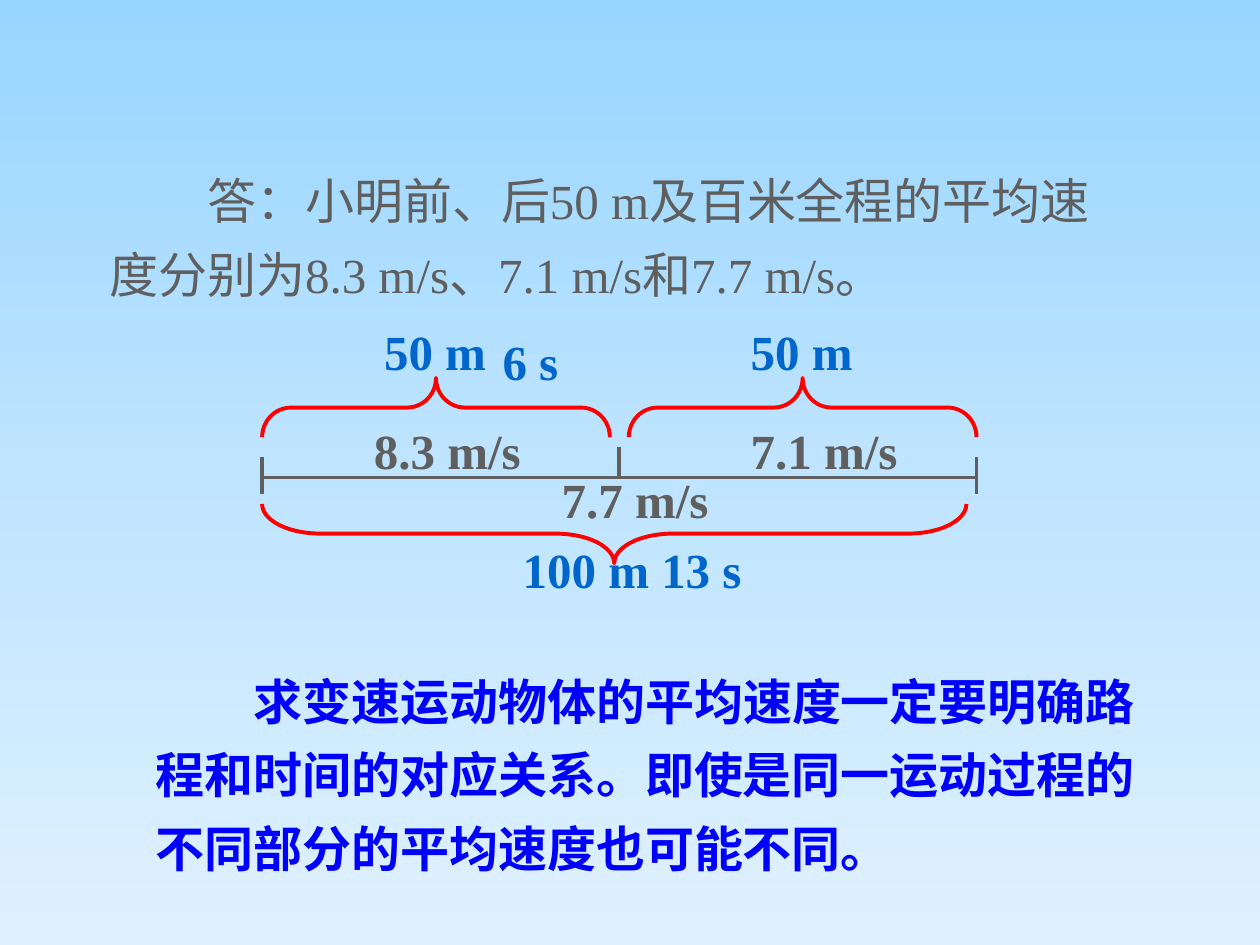
from copy import deepcopy
from dataclasses import dataclass

from lxml import etree
from pptx import Presentation
from pptx.dml.color import RGBColor
from pptx.enum.shapes import MSO_CONNECTOR, MSO_SHAPE
from pptx.enum.text import MSO_ANCHOR, MSO_AUTO_SIZE, PP_ALIGN
from pptx.oxml.ns import qn
from pptx.util import Inches, Pt

LINE = MSO_CONNECTOR.STRAIGHT
BRACE = MSO_SHAPE.LEFT_BRACE
ROUND = MSO_SHAPE.ROUNDED_RECTANGLE
LEFT = PP_ALIGN.LEFT
MIDDLE = MSO_ANCHOR.MIDDLE
GROW = MSO_AUTO_SIZE.SHAPE_TO_FIT_TEXT


@dataclass(frozen=True)
class Theme:
    font: str = "Times New Roman"
    size: int = 28
    stroke: float = 2.25
    gray: str = "5F5F5F"
    blue: str = "0066CC"
    note: str = "0000FF"
    red: str = "FF0000"
    sky: tuple = ("97D6FF", "BFE4FF", "DFF1FF")


THEME = Theme()


def rgb(code):
    return RGBColor.from_string(code)


def paint_back(slide):
    fill = slide.background.fill
    fill.gradient()
    fill.gradient_angle = 270
    first = next(slide.element.iter(qn("a:gs")))
    mid = deepcopy(first)
    mid.set("pos", "50000")
    first.addnext(mid)
    for stop, code in zip(fill.gradient_stops, THEME.sky):
        stop.color.rgb = rgb(code)


def write(shape, text, color, bold=True):
    para = shape.text_frame.paragraphs[0]
    para.text = text
    para.alignment = LEFT
    font = para.font
    font.name = THEME.font
    font.size = Pt(THEME.size)
    font.bold = bold
    font.color.rgb = rgb(color)
    return para


def indent(para):
    para.line_spacing = 1.25
    props = para._p.get_or_add_pPr()
    props.set("marL", "0")
    props.set("indent", str(Pt(2 * THEME.size)))


def add_answer(slide, x, y, w, h):
    box = slide.shapes.add_textbox(Inches(x), Inches(y), Inches(w), Inches(h))
    box.text_frame.word_wrap = True
    box.text_frame.auto_size = GROW
    text = "答：小明前、后50 m及百米全程的平均速度分别为8.3 m/s、7.1 m/s和7.7 m/s。"
    indent(write(box, text, THEME.gray, False))


def add_note(slide, x, y, w, h):
    box = slide.shapes.add_shape(ROUND, Inches(x), Inches(y), Inches(w), Inches(h))
    box.shadow.inherit = False
    box.fill.background()
    box.line.fill.background()
    box.text_frame.word_wrap = True
    box.text_frame.vertical_anchor = MIDDLE
    text = ("求变速运动物体的平均速度一定要明确路程和时间的对应关系。"
            "即使是同一运动过程的不同部分的平均速度也可能不同。")
    indent(write(box, text, THEME.note))


def add_line(slide, x1, y1, x2, y2):
    line = slide.shapes.add_connector(
        LINE, Inches(x1), Inches(y1), Inches(x2), Inches(y2))
    line.line.color.rgb = rgb(THEME.gray)
    line.line.width = Pt(THEME.stroke)
    etree.SubElement(line._element.spPr, qn("a:effectLst"))


def add_brace(slide, x, y, w, h, turn, bend):
    brace = slide.shapes.add_shape(
        BRACE, Inches(x + (w - h) / 2), Inches(y + (h - w) / 2),
        Inches(h), Inches(w))
    brace.rotation = turn
    brace.adjustments[0] = bend
    brace.adjustments[1] = 0.5
    brace.shadow.inherit = False
    brace.fill.background()
    brace.line.color.rgb = rgb(THEME.red)
    brace.line.width = Pt(THEME.stroke)


def add_label(slide, x, y, w, text, color):
    box = slide.shapes.add_textbox(Inches(x), Inches(y), Inches(w), Inches(0.57))
    box.text_frame.word_wrap = False
    box.text_frame.auto_size = GROW
    write(box, text, color)


def add_track(slide, x, y, w):
    axis = y + 1.29
    add_line(slide, x, axis, x + w, axis)
    for dx, up, down in ((0, 0.16, 0.13), (w / 2, 0.24, 0), (w, 0.16, 0.13)):
        add_line(slide, x + dx, axis - up, x + dx, axis + down)

    for dx, dy, span, turn, bend in (
        (0, 0.5, 2.76, 90, 0.487),
        (2.91, 0.5, 2.76, 90, 0.487),
        (0, 1.5, 5.59, 270, 0.987),
    ):
        add_brace(slide, x + dx, y + dy, span, 0.47, turn, bend)

    for dx, dy, span, text, color in (
        (0.87, 0, 1.01, "50 m", THEME.blue),
        (3.78, 0, 1.01, "50 m", THEME.blue),
        (1.81, 0.08, 0.64, "6 s", THEME.blue),
        (3.07, 1.73, 0.86, "13 s", THEME.blue),
        (1.97, 1.73, 1.21, "100 m", THEME.blue),
        (0.79, 0.79, 1.37, "8.3 m/s", THEME.gray),
        (3.78, 0.79, 1.37, "7.1 m/s", THEME.gray),
        (2.28, 1.18, 1.37, "7.7 m/s", THEME.gray),
    ):
        add_label(slide, x + dx, y + dy, span, text, color)


def main():
    deck = Presentation()
    deck.slide_width, deck.slide_height = Inches(10), Inches(7.5)
    slide = deck.slides.add_slide(deck.slide_layouts[6])
    paint_back(slide)
    add_answer(slide, 0.77, 1.19, 8.28, 1.27)
    add_note(slide, 1.05, 5.18, 8.39, 1.81)
    add_track(slide, 2.08, 2.5, 5.67)
    deck.save("out.pptx")


if __name__ == "__main__":
    main()
